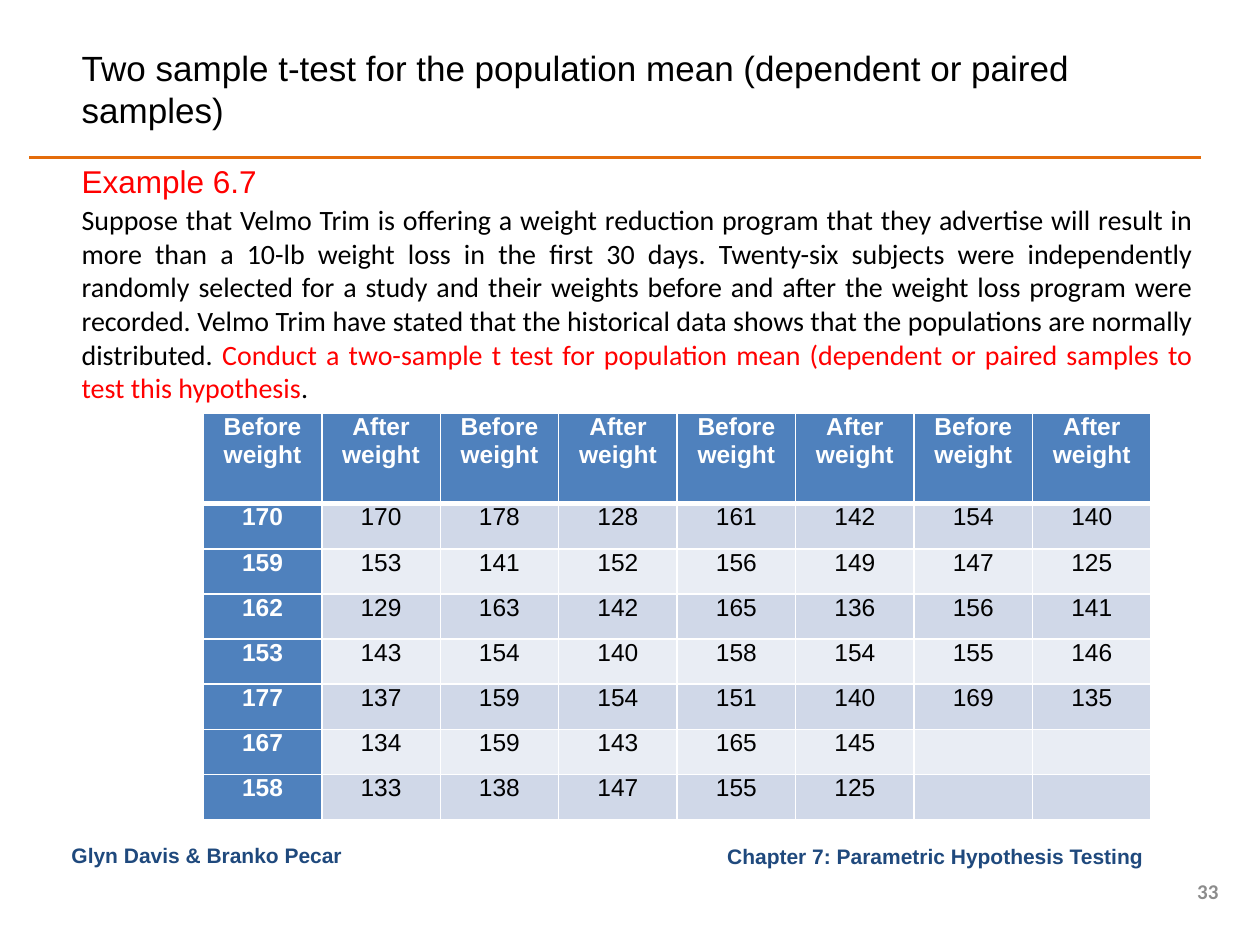
from dataclasses import dataclass

import lxml.etree
import pptx
import pptx.dml.color
import pptx.enum.shapes
import pptx.enum.text
import pptx.oxml
import pptx.oxml.ns
import pptx.util

Pt = pptx.util.Pt
ALIGN = pptx.enum.text.PP_ALIGN
ANCHOR = pptx.enum.text.MSO_ANCHOR

COLORS = {
    "black": "000000",
    "white": "FFFFFF",
    "red": "FF0000",
    "navy": "1F497D",
    "grey": "8C8C8C",
    "orange": "E46C0A",
    "header": "4F81BD",
    "band_dark": "D0D8E8",
    "band_light": "E9EDF4",
}


@dataclass
class Run:
    text: str
    size: float
    color: str
    font: str = "Arial"
    bold: bool = False


@dataclass
class TextBlock:
    left: float
    top: float
    width: float
    height: float
    runs: list[Run]
    align: ALIGN = ALIGN.LEFT
    anchor: ANCHOR = ANCHOR.TOP
    wrap: bool = True


BLOCKS = [
    TextBlock(270, 478, 393.8, 22.3,
              [Run("Chapter 7: Parametric Hypothesis Testing ", 12, "navy", bold=True)],
              ALIGN.RIGHT, ANCHOR.MIDDLE),
    TextBlock(39.6, 22.3, 643.7, 56.2,
              [Run("Two sample t-test for the population mean (dependent or paired samples)",
                   20, "black")],
              anchor=ANCHOR.MIDDLE),
    TextBlock(669.6, 500.4, 33.8, 17.3, [Run("33", 12, "grey", "Calibri", True)],
              ALIGN.RIGHT, ANCHOR.MIDDLE),
    TextBlock(33.8, 478, 213.8, 22.3,
              [Run("Glyn Davis & Branko Pecar", 12, "navy", bold=True)]),
    TextBlock(39.6, 112.3, 649.4, 123.8, [
        Run("Suppose that Velmo Trim is offering a weight reduction program that they "
            "advertise will result in more than a 10-lb weight loss in the first 30 days. "
            "Twenty-six subjects were independently randomly selected for a study and their "
            "weights before and after the weight loss program were recorded. Velmo Trim have "
            "stated that the historical data shows that the populations are normally "
            "distributed. ", 16, "black", "Calibri"),
        Run("Conduct a two-sample t test for population mean (dependent or paired samples "
            "to test this hypothesis", 16, "red", "Calibri"),
        Run(".", 16, "black", "Calibri"),
    ], ALIGN.JUSTIFY),
    TextBlock(39.6, 89.3, 124.6, 28.8, [Run("Example 6.7", 18, "red")], wrap=False),
]

WEIGHTS = [
    ["Before weight", "After weight"] * 4,
    [170, 170, 178, 128, 161, 142, 154, 140],
    [159, 153, 141, 152, 156, 149, 147, 125],
    [162, 129, 163, 142, 165, 136, 156, 141],
    [153, 143, 154, 140, 158, 154, 155, 146],
    [177, 137, 159, 154, 151, 140, 169, 135],
    [167, 134, 159, 143, 165, 145, "", ""],
    [158, 133, 138, 147, 155, 125, "", ""],
]


def rgb(name: str) -> pptx.dml.color.RGBColor:
    """Return the named colour."""
    return pptx.dml.color.RGBColor.from_string(COLORS[name])


def add_run(p, run: Run) -> None:
    """Append a styled run to a paragraph."""
    r = p.add_run()
    r.text = run.text
    r.font.name = run.font
    r.font.size = Pt(run.size)
    r.font.bold = run.bold
    r.font.color.rgb = rgb(run.color)


def add_text(s, block: TextBlock) -> None:
    """Add a text box holding one paragraph."""
    sp = s.shapes.add_textbox(Pt(block.left), Pt(block.top), Pt(block.width), Pt(block.height))
    tf = sp.text_frame
    tf.word_wrap = block.wrap
    tf.vertical_anchor = block.anchor
    p = tf.paragraphs[0]
    p.alignment = block.align
    for run in block.runs:
        add_run(p, run)


def add_rule(s, x1: float, x2: float, y: float) -> None:
    """Add the horizontal rule under the title."""
    line = s.shapes.add_connector(
        pptx.enum.shapes.MSO_CONNECTOR.STRAIGHT, Pt(x1), Pt(y), Pt(x2), Pt(y))
    line.line.color.rgb = rgb("orange")
    line.line.width = Pt(2)
    lxml.etree.SubElement(line._element.spPr, pptx.oxml.ns.qn("a:effectLst"))


def add_borders(cell, top: float, bottom: float) -> None:
    """Give a cell white borders, with top and bottom widths in points."""
    tc_pr = cell._tc.get_or_add_tcPr()
    for side, width in (("L", 1), ("R", 1), ("T", top), ("B", bottom)):
        tc_pr.append(pptx.oxml.parse_xml(
            f'<a:ln{side} {pptx.oxml.ns.nsdecls("a")} w="{Pt(width)}"><a:solidFill>'
            f'<a:srgbClr val="{COLORS["white"]}"/></a:solidFill></a:ln{side}>'))


def fill_cell(cell, value: str, row: int, col: int) -> None:
    """Style one table cell and write its value."""
    is_head = row == 0 or col == 0
    add_borders(cell, 3 if row == 1 else 1, 3 if row == 0 else 1)
    band = "band_dark" if row % 2 else "band_light"
    cell.fill.solid()
    cell.fill.fore_color.rgb = rgb("header" if is_head else band)
    cell.margin_left = cell.margin_right = Pt(5)
    cell.margin_top = cell.margin_bottom = Pt(0)
    if value:
        p = cell.text_frame.paragraphs[0]
        p.alignment = ALIGN.CENTER
        add_run(p, Run(value, 14, "white" if is_head else "black", bold=is_head))


def add_weights(s, left: float, top: float, col_width: float,
                head_height: float, row_height: float) -> None:
    """Add the table of weights before and after the program."""
    rows, cols = len(WEIGHTS), len(WEIGHTS[0])
    height = head_height + row_height * (rows - 1)
    table = s.shapes.add_table(
        rows, cols, Pt(left), Pt(top), Pt(col_width * cols), Pt(height)).table
    table.first_col = True
    for column in table.columns:
        column.width = Pt(col_width)
    for i, values in enumerate(WEIGHTS):
        table.rows[i].height = Pt(row_height if i else head_height)
        for j, value in enumerate(values):
            fill_cell(table.cell(i, j), str(value), i, j)


def main() -> None:
    """Build and save the slide."""
    prs = pptx.Presentation()
    prs.slide_width, prs.slide_height = Pt(720), Pt(540)
    s = prs.slides.add_slide(prs.slide_layouts[6])
    add_rule(s, 16.6, 686.2, 90)
    for block in BLOCKS:
        add_text(s, block)
    add_weights(s, 116.2, 236.2, 67.7, 51.6, 25.8)
    prs.save("out.pptx")


if __name__ == "__main__":
    main()
